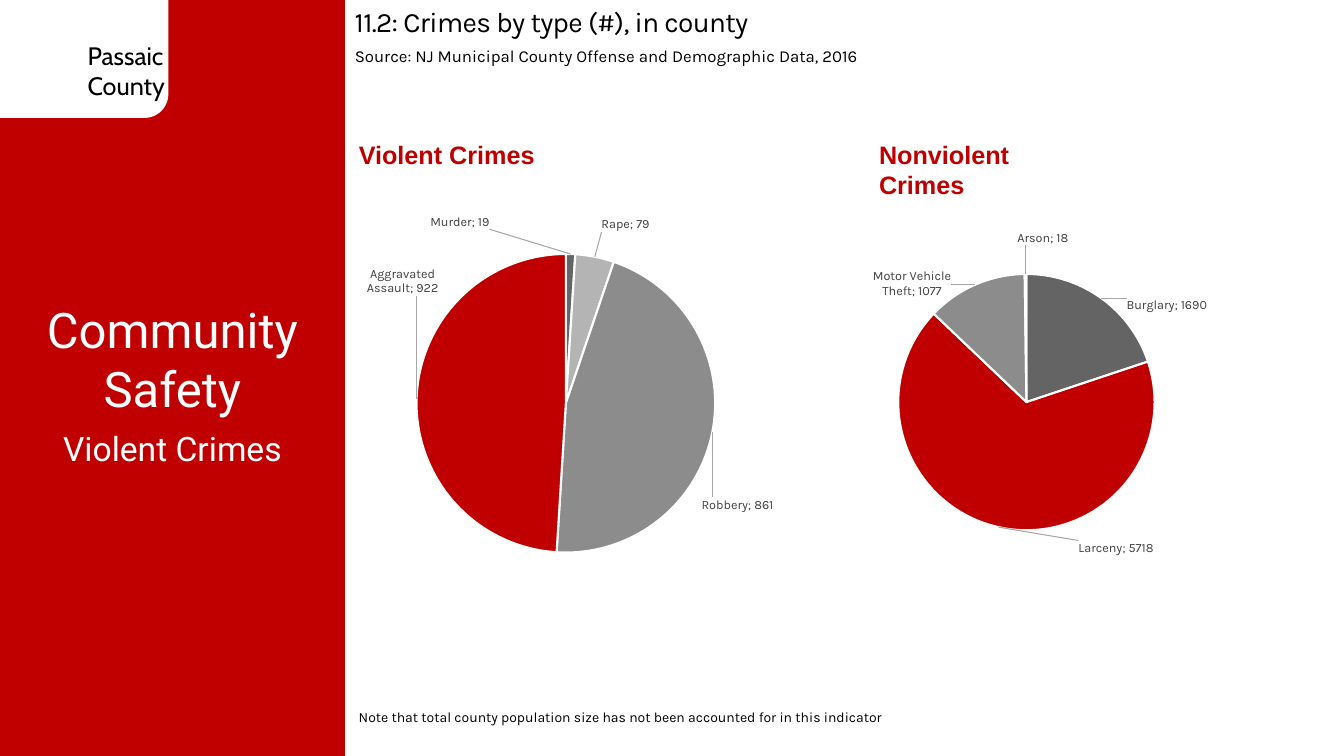
"""Build the county crime slide with two labelled pie charts."""
from lxml.etree import SubElement
from pptx import Presentation
from pptx.chart.data import CategoryChartData
from pptx.dml.color import RGBColor
from pptx.enum.chart import XL_CHART_TYPE, XL_LABEL_POSITION
from pptx.enum.shapes import MSO_SHAPE
from pptx.enum.text import PP_ALIGN
from pptx.oxml.ns import qn
from pptx.util import Inches, Pt

RED, WHITE, BLACK = "C00000", "FFFFFF", "000000"

PANELS = [
    (MSO_SHAPE.RECTANGLE, (0, 0, 3.42, 7.5), RED),
    (MSO_SHAPE.ROUNDED_RECTANGLE, (-0.33, -0.25, 2, 1.42), WHITE),
]

LEFT, CENTER = PP_ALIGN.LEFT, PP_ALIGN.CENTER
TEXTS = [
    (["Passaic", "County"], (0.77, 0.35, 1, 0.71), 18, "Cabin", BLACK, LEFT),
    (["Community Safety"], (0, 2.92, 3.42, 1.28), 35, "Roboto", WHITE, CENTER),
    (["Violent Crimes"], (0, 4.2, 3.42, 0.5), 24, "Roboto", WHITE, CENTER),
    (["11.2: Crimes by type (#), in county"], (3.42, 0, 9.86, 0.44), 20, "Karla", BLACK, LEFT),
    (["Source: NJ Municipal County Offense and Demographic Data, 2016"],
     (3.42, 0.4, 9.19, 0.3), 12, "Karla", BLACK, LEFT),
    (["Violent Crimes"], (3.46, 1.33, 1.95, 0.42), 18, "Arial", RED, LEFT),
    (["Nonviolent Crimes"], (8.62, 1.33, 2.4, 0.42), 18, "Arial", RED, LEFT),
    (["Note that total county population size has not been accounted for in this indicator"],
     (3.46, 6.98, 7.17, 0.27), 10, "Karla", BLACK, LEFT),
]

# Each slice: category, value, colour, label shift as a share of the chart.
PIES = [
    ((3, 1.77, 5.5, 3.75), (0.17, 0.2, 0.61, 0.79), [
        ("Murder", 19, "646464", (-0.2, -0.05)),
        ("Rape", 79, "B4B4B4", (0.01, -0.05)),
        ("Robbery", 861, "8C8C8C", (-0.03, 0.17)),
        ("Aggravated Assault", 922, RED, (0.05, -0.31)),
    ]),
    ((8.09, 2.04, 4.31, 3.75), (0.19, 0.18, 0.59, 0.68), [
        ("Burglary", 1690, "646464", (0.05, 0.05)),
        ("Larceny", 5718, RED, (0.36, 0.02)),
        ("Motor Vehicle Theft", 1077, "8C8C8C", (-0.05, 0.05)),
        ("Arson", 18, "292929", (0.04, -0.06)),
    ]),
]


def color(target, value):
    target.rgb = RGBColor.from_string(value)


def paint(fill, value):
    fill.solid()
    color(fill.fore_color, value)


def style(font, size, name, value):
    font.size, font.name = Pt(size), name
    color(font.color, value)


def add_panel(page, kind, place, value):
    panel = page.shapes.add_shape(kind, *map(Inches, place))
    panel.shadow.inherit = False
    paint(panel.fill, value)
    panel.line.fill.background()


def add_text(page, lines, place, size, name, value, align):
    frame = page.shapes.add_textbox(*map(Inches, place)).text_frame
    frame.word_wrap = True
    for index, line in enumerate(lines):
        para = frame.add_paragraph() if index else frame.paragraphs[0]
        para.alignment = align
        span = para.add_run()
        span.text = line
        style(span.font, size, name, value)
        span.font.bold = name == "Arial"
        if size == 20:
            span.font._element.set("spc", "-50")


def add_layout(parent, position, settings):
    layout = SubElement(parent, qn("c:layout"))
    parent.insert(position, layout)
    manual = SubElement(layout, qn("c:manualLayout"))
    for tag, value in settings:
        SubElement(manual, qn(f"c:{tag}")).set("val", str(value))


def add_pie(page, place, plot_place, slices):
    data = CategoryChartData()
    data.categories = [item[0] for item in slices]
    data.add_series("Series 1", [item[1] for item in slices])
    chart = page.shapes.add_chart(XL_CHART_TYPE.PIE, *map(Inches, place), data).chart
    chart.has_legend = chart.has_title = False
    style(chart.font, 10, "Calibri", BLACK)

    area = chart._chartSpace.find(".//" + qn("c:plotArea"))
    for old in area.findall(qn("c:layout")):
        area.remove(old)
    modes = [("layoutTarget", "inner"), ("xMode", "edge"), ("yMode", "edge")]
    add_layout(area, 0, modes + list(zip("xywh", plot_place)))

    chart.plots[0].vary_by_categories = True
    series = chart.plots[0].series[0]
    labels = series.data_labels
    style(labels.font, 9, "Karla", "404040")
    labels.show_category_name = labels.show_value = True
    labels.position = XL_LABEL_POSITION.OUTSIDE_END
    for index, (_, _, value, _) in enumerate(slices):
        point = series.points[index]
        paint(point.format.fill, value)
        color(point.format.line.color, WHITE)
        point.format.line.width = Pt(1.5)
        style(point.data_label.font, 9, "Karla", "404040")
        point.data_label.position = XL_LABEL_POSITION.OUTSIDE_END

    group = labels._element
    for label, (_, _, _, shift) in zip(group.findall(qn("c:dLbl")), slices):
        add_layout(label, 1, zip("xy", shift))
        label.find(qn("c:showCatName")).set("val", "1")
        SubElement(label, qn("c:separator")).text = "; "
    leader = SubElement(SubElement(group, qn("c:leaderLines")), qn("c:spPr"))
    line = SubElement(leader, qn("a:ln"), w="9525")
    SubElement(SubElement(line, qn("a:solidFill")), qn("a:srgbClr"), val="A6A6A6")


def main():
    deck = Presentation()
    deck.slide_width, deck.slide_height = Inches(13.33), Inches(7.5)
    page = deck.slides.add_slide(deck.slide_layouts[6])
    for panel in PANELS:
        add_panel(page, *panel)
    for text in TEXTS:
        add_text(page, *text)
    for pie in PIES:
        add_pie(page, *pie)
    deck.save("out.pptx")


if __name__ == "__main__":
    main()
